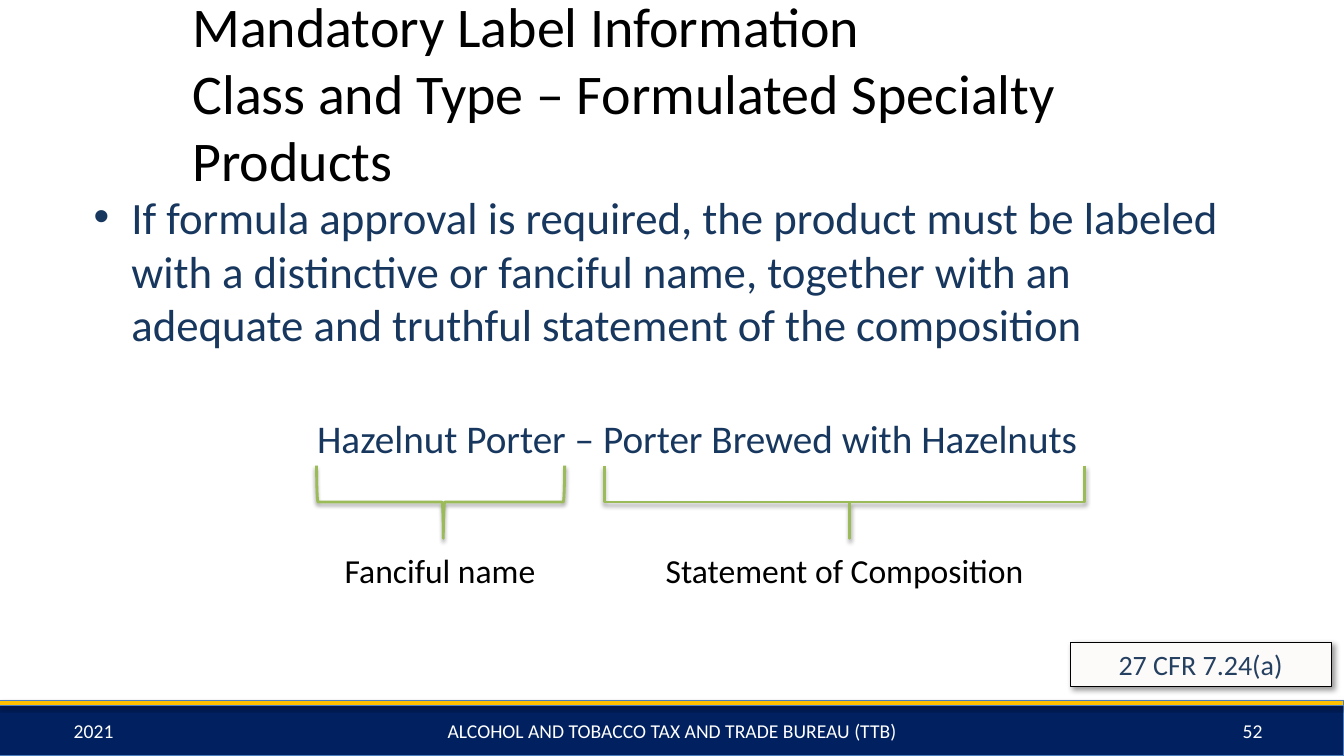
from lxml.etree import SubElement
from pptx import Presentation
from pptx.dml.color import RGBColor
from pptx.enum.shapes import MSO_SHAPE
from pptx.enum.text import MSO_ANCHOR, PP_ALIGN
from pptx.oxml.ns import qn
from pptx.util import Cm, Pt

COLORS = {
    "navy": "002060", "gold": "FFC000", "bar_line": "4B7EBC",
    "white": "FFFFFF", "black": "000000", "body": "17375E",
    "citation": "254061", "citation_fill": "FCFBF9", "brace": "9BBB59",
}
SLIDE_WIDTH, SLIDE_HEIGHT = 33.87, 19.05
FOOTER_TOP = 17.65


def rgb(name):
    return RGBColor.from_string(COLORS[name])


class LabelSlide:
    """Holds the text style and the slide being built; lengths are in cm."""

    font = "Calibri"

    def __init__(self, slide):
        self.slide = slide

    def format_paragraph(self, paragraph, size, color, align):
        paragraph.alignment = align
        for run in paragraph.runs:
            run.font.name = self.font
            run.font.size = Pt(size)
            run.font.color.rgb = rgb(color)

    def fill_frame(self, frame, text, size, color, align, anchor):
        frame.word_wrap = True
        frame.vertical_anchor = anchor
        frame.text = text
        for paragraph in frame.paragraphs:
            self.format_paragraph(paragraph, size, color, align)

    def text(self, box, text, size, color="black", align=PP_ALIGN.CENTER,
             anchor=MSO_ANCHOR.TOP):
        frame = self.slide.shapes.add_textbox(*map(Cm, box)).text_frame
        self.fill_frame(frame, text, size, color, align, anchor)
        return frame

    def shape(self, kind, box, fill, line, width, shadow):
        """Add a shape; shadow is (opacity %, blur pt, distance pt, angle)."""
        shape = self.slide.shapes.add_shape(kind, *map(Cm, box))
        if fill:
            shape.fill.solid()
            shape.fill.fore_color.rgb = rgb(fill)
        else:
            shape.fill.background()
        shape.line.color.rgb = rgb(line)
        shape.line.width = Pt(width)
        shape.shadow.inherit = False
        opacity, blur, distance, angle = shadow
        effects = shape.element.spPr.find(qn("a:effectLst"))
        outer = SubElement(effects, qn("a:outerShdw"), blurRad=str(Pt(blur)),
                           dist=str(Pt(distance)), dir=str(angle * 60000),
                           rotWithShape="0")
        tint = SubElement(outer, qn("a:srgbClr"), val=COLORS["black"])
        SubElement(tint, qn("a:alpha"), val=str(opacity * 1000))
        return shape

    def bar(self, height, fill):
        self.shape(MSO_SHAPE.RECTANGLE, (0, FOOTER_TOP, SLIDE_WIDTH, height),
                   fill, "bar_line", 0.75, (35, 3.1, 1.8, 90))

    def brace_below(self, left, width, bend):
        """Add a brace that spans the given width and points down."""
        depth, middle = 1.83, 12.65
        box = (left + (width - depth) / 2, middle - width / 2, depth, width)
        brace = self.shape(MSO_SHAPE.LEFT_BRACE, box, None, "brace", 2,
                           (38, 3.1, 1.6, 90))
        brace.rotation = 270
        brace.adjustments[0] = bend
        brace.adjustments[1] = 0.511

    def citation(self, box, text):
        card = self.shape(MSO_SHAPE.RECTANGLE, box, "citation_fill", "black",
                          0.75, (40, 4, 3, 45))
        self.fill_frame(card.text_frame, text, 20, "citation",
                        PP_ALIGN.CENTER, MSO_ANCHOR.TOP)

    def rule_and_example(self, box, rule, example):
        """Add the bulleted rule with a centred example under it."""
        frame = self.text(box, rule, 32, "body", PP_ALIGN.LEFT)
        indent = Cm(0.95)
        bullet = frame.paragraphs[0]._p.get_or_add_pPr()
        bullet.set("marL", str(indent))
        bullet.set("indent", str(-indent))
        SubElement(bullet, qn("a:buFont"), typeface="Arial")
        SubElement(bullet, qn("a:buChar"), char="•")
        sample = frame.add_paragraph()
        sample.text = example
        sample._p.get_or_add_pPr().set("marL", str(Cm(1.27)))
        sample.space_before = Pt(45)
        self.format_paragraph(sample, 28, "body", PP_ALIGN.CENTER)


def main():
    deck = Presentation()
    deck.slide_width, deck.slide_height = Cm(SLIDE_WIDTH), Cm(SLIDE_HEIGHT)
    page = LabelSlide(deck.slides.add_slide(deck.slide_layouts[6]))

    page.bar(SLIDE_HEIGHT - FOOTER_TOP, "navy")
    page.bar(0.13, "gold")

    title = page.text(
        (4.6, 1.27, 27.58, 2.11),
        "Mandatory Label Information\v"
        "Class and Type – Formulated Specialty Products",
        40, align=PP_ALIGN.LEFT, anchor=MSO_ANCHOR.MIDDLE)
    title.margin_right = Cm(0.6)

    page.rule_and_example(
        (2.11, 4.65, 29.64, 12.37),
        "If formula approval is required, the product must be labeled with "
        "a distinctive or fanciful name, together with an adequate and "
        "truthful statement of the composition",
        "Hazelnut Porter – Porter Brewed with Hazelnuts")

    for left, width, text in (
        (0, 4.72, "2021"),
        (9.04, 15.8, "ALCOHOL AND TOBACCO TAX AND TRADE BUREAU (TTB)"),
        (29.31, 4.52, "52"),
    ):
        page.text((left, 17.91, width, 1.02), text, 14, "white",
                  anchor=MSO_ANCHOR.MIDDLE)

    page.citation((26.97, 16.18, 6.58, 1.12), "27 CFR 7.24(a)")

    for brace_left, brace_width, bend, label_left, label_width, label in (
        (7.98, 6.25, 0.02, 7.65, 6.88, "Fanciful name"),
        (15.24, 12.09, 0, 16.28, 10.01, "Statement of Composition"),
    ):
        page.brace_below(brace_left, brace_width, bend)
        page.text((label_left, 13.74, label_width, 1.27), label, 24)

    deck.save("out.pptx")


if __name__ == "__main__":
    main()
